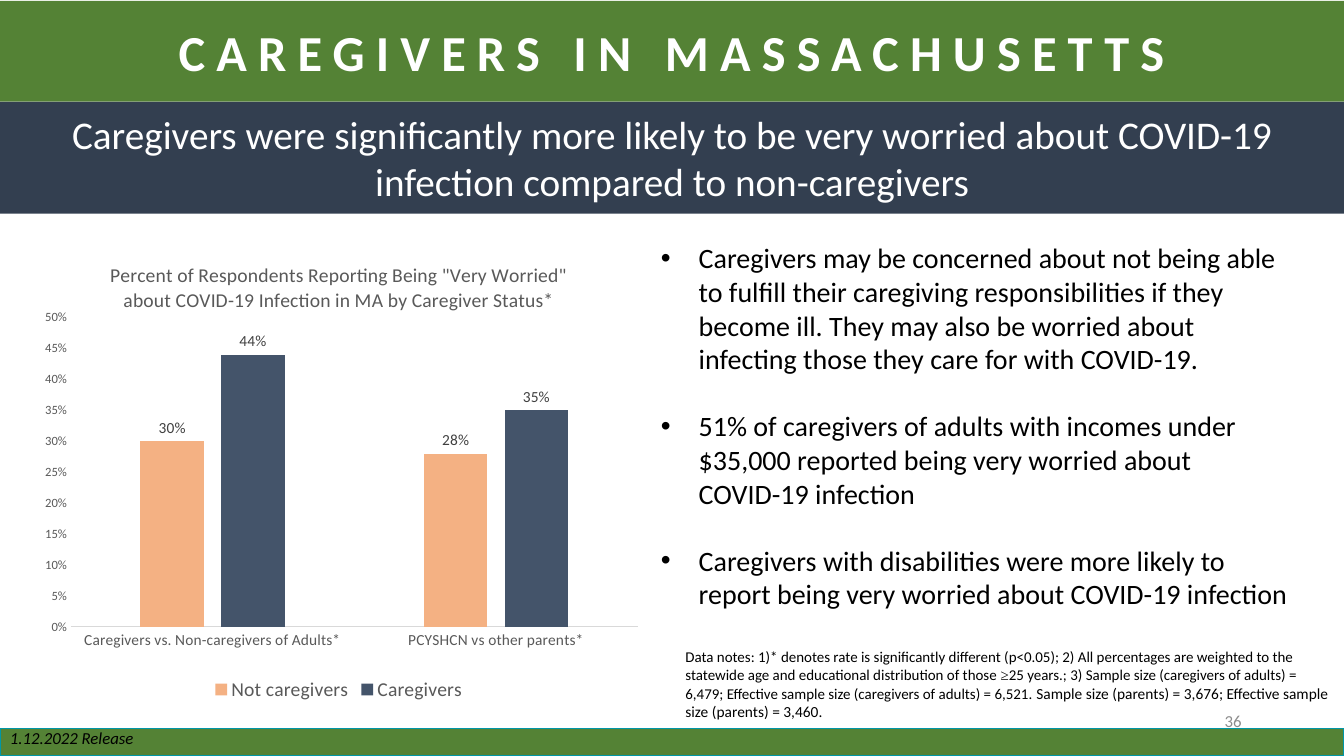
from lxml.etree import SubElement
from pptx import Presentation
from pptx.chart.data import CategoryChartData
from pptx.dml.color import RGBColor
from pptx.enum.chart import XL_CHART_TYPE as ChartType
from pptx.enum.chart import XL_LABEL_POSITION as LabelPos
from pptx.enum.chart import XL_LEGEND_POSITION as LegendPos
from pptx.enum.chart import XL_TICK_MARK as TickMark
from pptx.enum.shapes import MSO_SHAPE as Shape
from pptx.enum.text import MSO_ANCHOR as Anchor
from pptx.enum.text import PP_ALIGN as Align
from pptx.oxml import parse_xml
from pptx.oxml.ns import nsdecls, qn
from pptx.util import Pt

COLORS = {
    "green": "548235", "navy": "333F50", "teal": "0097A7",
    "white": "FFFFFF", "black": "000000", "number": "8C8C8C",
    "axis": "595959", "label": "404040", "rule": "D9D9D9",
    "Not caregivers": "F4B183", "Caregivers": "44546A",
}
WIDTH, HEIGHT = 960, 540

POINTS = [
    "Caregivers may be concerned about not being able to fulfill their caregiving "
    "responsibilities if they become ill. They may also be worried "
    "about infecting those they care for with COVID-19.",
    "51% of caregivers of adults with incomes under $35,000 reported being very "
    "worried about COVID-19 infection",
    "Caregivers with disabilities were more likely to report being very worried "
    "about COVID-19 infection",
]
NOTES = [
    ("Data notes: 1)* denotes rate is significantly different (p<0.05); 2) All percentages "
     "are weighted to the statewide age and educational distribution of those ",
     {"size": Pt(10.7)}),
    ("≥", {"size": Pt(10.7), "name": "Times New Roman"}),
    ("25 years.; 3) Sample size (caregivers of adults) = 6,479; Effective sample size "
     "(caregivers of adults) = 6,521. ", {"size": Pt(10.7)}),
    ("Sample size (parents) = 3,676; Effective sample size (parents) = 3,460.",
     {"size": Pt(11)}),
]


def color(name):
    return RGBColor.from_string(COLORS[name])


def style(font, hue, **values):
    for key, value in {"name": "Calibri", **values}.items():
        setattr(font, key, value)
    font.color.rgb = color(hue)


def add_span(para, text, hue, **values):
    span = para.add_run()
    span.text = text
    style(span.font, hue, **values)
    return span


def text_box(page, box, **values):
    frame = page.shapes.add_textbox(*map(Pt, box)).text_frame
    for key, value in {"word_wrap": True, **values}.items():
        setattr(frame, key, value)
    return frame


def band(page, box, hue, text="", size=28, edge=None, **values):
    """Full-width bar with an optional centred heading."""
    bar = page.shapes.add_shape(Shape.RECTANGLE, *map(Pt, box))
    bar.shadow.inherit = False
    bar.fill.solid()
    bar.fill.fore_color.rgb = color(hue)
    if edge:
        bar.line.color.rgb = color(edge)
        bar.line.width = Pt(1)
    else:
        bar.line.fill.background()
    if text:
        bar.text_frame.vertical_anchor = Anchor.MIDDLE
        para = bar.text_frame.paragraphs[0]
        para.alignment = Align.CENTER
        return add_span(para, text, "white", size=Pt(size), **values)


def header(page, box):
    left, top, width, height = box
    title = band(page, (left, top, width, 72), "green",
                 "CAREGIVERS IN MASSACHUSETTS", 36, bold=True)
    title.font._element.set("spc", "800")
    band(page, (left, top + 72, width, height - 72), "navy",
         "Caregivers were significantly more likely to be very worried about COVID-19 "
         "infection compared to non-caregivers")


def bullets(page, box):
    frame = text_box(page, box)
    for index, text in enumerate(POINTS):
        para = frame.paragraphs[0] if index == 0 else frame.add_paragraph()
        para.space_before = Pt(24 if index else 0)
        props = para._p.get_or_add_pPr()
        props.set("marL", str(Pt(27)))
        props.set("indent", str(-Pt(27)))
        SubElement(props, qn("a:buFont")).set("typeface", "Arial")
        SubElement(props, qn("a:buChar")).set("char", "•")
        add_span(para, text, "black", size=Pt(20))


def data_notes(page, box):
    frame = text_box(page, box, margin_left=Pt(9.6), margin_right=Pt(9.6),
                     margin_top=Pt(4.8), margin_bottom=Pt(4.8))
    for text, values in NOTES:
        add_span(frame.paragraphs[0], text, "black", **values)


def footer(page, box):
    left, top, width, height = box
    band(page, box, "green", edge="teal")
    release = text_box(page, (left, top - 3.6, 216, 20), vertical_anchor=Anchor.MIDDLE)
    add_span(release.paragraphs[0], "1.12.2022 Release", "black", size=Pt(12), italic=True)
    number = text_box(page, (left + 678, top - 20, 216, 29), vertical_anchor=Anchor.MIDDLE)
    number.paragraphs[0].alignment = Align.RIGHT
    add_span(number.paragraphs[0], "36", "number", size=Pt(12))


def worry_chart(page, box):
    data = CategoryChartData(number_format="0%")
    data.categories = ["Caregivers vs. Non-caregivers of Adults*", "PCYSHCN vs other parents*"]
    data.add_series("Not caregivers", [0.3, 0.28])
    data.add_series("Caregivers", [0.44, 0.35])
    chart = page.shapes.add_chart(ChartType.COLUMN_CLUSTERED, *map(Pt, box), data).chart
    style(chart.font, "black", size=Pt(10))

    # Title and legend
    add_span(chart.chart_title.text_frame.paragraphs[0],
             'Percent of Respondents Reporting Being "Very Worried" about COVID-19 '
             "Infection in MA by Caregiver Status*", "axis", size=Pt(14), bold=False)
    chart.chart_title.include_in_layout = False
    chart.has_legend = True
    chart.legend.position = LegendPos.BOTTOM
    chart.legend.include_in_layout = False
    style(chart.legend.font, "axis", size=Pt(14))

    # Axes
    for axis, size in ((chart.category_axis, 11), (chart.value_axis, 9)):
        axis.major_tick_mark = axis.minor_tick_mark = TickMark.NONE
        axis.has_major_gridlines = False
        style(axis.tick_labels.font, "axis", size=Pt(size))
    chart.category_axis.format.line.color.rgb = color("rule")
    chart.category_axis.format.line.width = Pt(0.75)
    scale = {"minimum_scale": 0, "maximum_scale": 0.5, "major_unit": 0.05}
    for key, value in scale.items():
        setattr(chart.value_axis, key, value)
    chart.value_axis.format.line.fill.background()
    chart.value_axis.tick_labels.number_format = "0%"
    chart.value_axis.tick_labels.number_format_is_linked = False

    # Columns
    plot = chart.plots[0]
    plot.gap_width, plot.overlap, plot.vary_by_categories = 219, -27, False
    for series in plot.series:
        series.format.fill.solid()
        series.format.fill.fore_color.rgb = color(series.name)
        labels = series.data_labels
        for key, value in {"show_value": True, "position": LabelPos.OUTSIDE_END,
                           "number_format": "0%", "number_format_is_linked": False}.items():
            setattr(labels, key, value)
        style(labels.font, "label", size=Pt(11))

    # Inner plot area as fractions of the chart
    area = chart._chartSpace.chart.plotArea
    for old in area.findall(qn("c:layout")):
        area.remove(old)
    place = {"x": 0.07, "y": 0.16, "w": 0.91, "h": 0.67}
    modes = "".join(f'<c:{key}Mode val="edge"/>' for key in "xy")
    sides = "".join(f'<c:{key} val="{value}"/>' for key, value in place.items())
    area.insert(0, parse_xml(
        f'<c:layout {nsdecls("c")}><c:manualLayout><c:layoutTarget val="inner"/>'
        f"{modes}{sides}</c:manualLayout></c:layout>"))


def main():
    deck = Presentation()
    deck.slide_width, deck.slide_height = Pt(WIDTH), Pt(HEIGHT)
    page = deck.slides.add_slide(deck.slide_layouts[6])
    header(page, (0, 0.7, WIDTH, 152))
    bullets(page, (465, 168.5, 464.5, 273.5))
    data_notes(page, (480, 458, 480, 62))
    footer(page, (0, 520.5, WIDTH, 19.5))
    worry_chart(page, (19.5, 174, 445, 330))
    deck.save("out.pptx")


if __name__ == "__main__":
    main()
